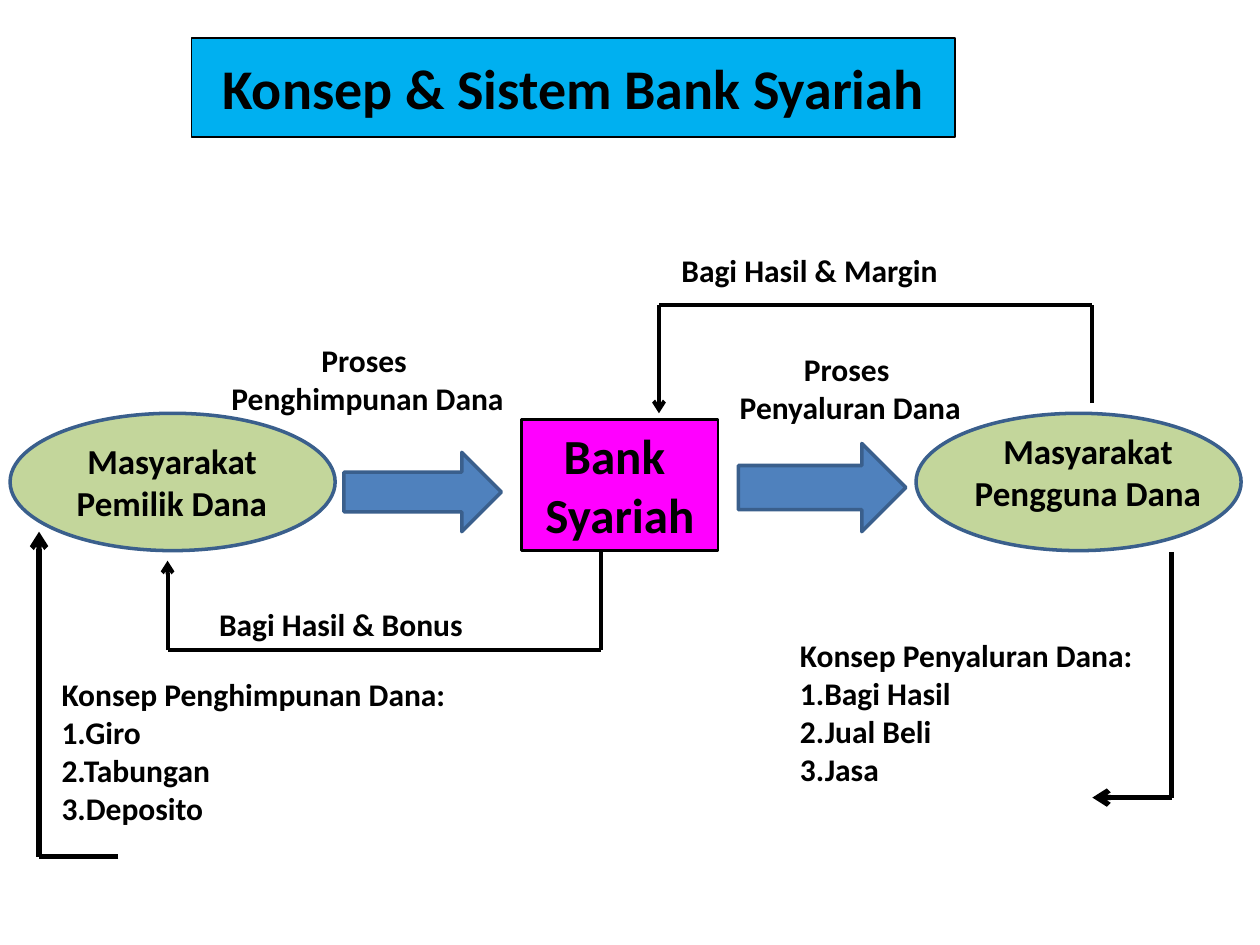
from itertools import pairwise

from lxml.etree import SubElement
from pptx import Presentation
from pptx.dml.color import RGBColor
from pptx.enum.shapes import MSO_CONNECTOR, MSO_SHAPE
from pptx.enum.text import MSO_ANCHOR, PP_ALIGN
from pptx.oxml.ns import qn
from pptx.util import Inches, Pt

BLACK = RGBColor(0x00, 0x00, 0x00)
SKY = RGBColor(0x00, 0xB0, 0xF0)
MAGENTA = RGBColor(0xFF, 0x00, 0xFF)
GREEN = RGBColor(0xC3, 0xD6, 0x9B)
BLUE = RGBColor(0x4F, 0x81, 0xBD)
NAVY = RGBColor(0x3A, 0x5F, 0x8C)

TITLE = "Konsep & Sistem Bank Syariah"
TITLE_AREA = (1.52, 0.3, 6.06, 0.79)
BANK = ["Bank ", "Syariah"]
BANK_AREA = (4.14, 3.33, 1.56, 1.04)

PARTIES = [(0.08, 3.28, 2.58, 1.09), (7.27, 3.28, 2.58, 1.09)]
PROCESS_ARROWS = [(2.73, 3.59, 1.25, 0.63), (5.86, 3.52, 1.33, 0.7)]

LABELS = [
    (["Masyarakat Pemilik Dana"], (0.31, 3.44, 2.11, 0.77), 20, PP_ALIGN.CENTER),
    (["Masyarakat Pengguna Dana"], (7.5, 3.36, 2.27, 0.77), 20, PP_ALIGN.CENTER),
    (["Proses", " Penghimpunan Dana"], (1.64, 2.66, 2.5, 0.71), 18, PP_ALIGN.CENTER),
    (["Proses", " Penyaluran Dana"], (5.47, 2.73, 2.5, 0.71), 18, PP_ALIGN.CENTER),
    (["Bagi Hasil & Bonus"], (1.64, 4.75, 2.19, 0.4), 18, PP_ALIGN.LEFT),
    (["Bagi Hasil & Margin"], (5.31, 1.94, 2.27, 0.4), 18, PP_ALIGN.LEFT),
    (["Konsep Penghimpunan Dana:", "1.Giro", "2.Tabungan", "3.Deposito"],
     (0.39, 5.31, 3.44, 1.31), 18, PP_ALIGN.LEFT),
    (["Konsep Penyaluran Dana:", "1.Bagi Hasil", "2.Jual Beli", "3.Jasa"],
     (6.25, 5, 3.05, 1.31), 18, PP_ALIGN.LEFT),
]

ROUTES = [
    ([(4.77, 4.38), (4.77, 5.16), (1.33, 5.16), (1.33, 4.45)], 2.25),
    ([(8.67, 3.2), (8.67, 2.42), (5.23, 2.42), (5.23, 3.28)], 2.25),
    ([(0.94, 6.8), (0.31, 6.8), (0.31, 4.22)], 3),
    ([(9.3, 4.38), (9.3, 6.33), (8.67, 6.33)], 3),
]


def write_text(box, lines, size=18, align=PP_ALIGN.CENTER, anchor=MSO_ANCHOR.TOP):
    frame = box.text_frame
    frame.word_wrap = True
    frame.vertical_anchor = anchor
    for index, line in enumerate(lines):
        para = frame.add_paragraph() if index else frame.paragraphs[0]
        para.alignment = align
        span = para.add_run()
        span.text = line
        span.font.name = "Calibri"
        span.font.size = Pt(size)
        span.font.bold = True
        span.font.color.rgb = BLACK


def paint(shape, fill, line, width):
    shape.fill.solid()
    shape.fill.fore_color.rgb = fill
    shape.line.color.rgb = line
    shape.line.width = Pt(width)


def add_block(page, kind, area, fill, line, width):
    shape = page.shapes.add_shape(kind, *map(Inches, area))
    shape.shadow.inherit = False
    paint(shape, fill, line, width)
    return shape


def add_route(page, points, width):
    for start, end in pairwise(points):
        connector = page.shapes.add_connector(
            MSO_CONNECTOR.STRAIGHT, *map(Inches, start + end))
        connector.line.color.rgb = BLACK
        connector.line.width = Pt(width)
        properties = connector._element.spPr
        SubElement(properties, qn("a:effectLst"))
    SubElement(properties.find(qn("a:ln")), qn("a:tailEnd"), type="arrow")


def main():
    deck = Presentation()
    deck.slide_width, deck.slide_height = Inches(10), Inches(7.5)
    page = deck.slides.add_slide(deck.slide_layouts[5])

    title = page.shapes.title
    title.left, title.top, title.width, title.height = map(Inches, TITLE_AREA)
    paint(title, SKY, BLACK, 1)
    write_text(title, [TITLE], size=32, anchor=MSO_ANCHOR.MIDDLE)

    bank = add_block(page, MSO_SHAPE.RECTANGLE, BANK_AREA, MAGENTA, BLACK, 1.5)
    write_text(bank, BANK, size=28)
    for area in PARTIES:
        add_block(page, MSO_SHAPE.OVAL, area, GREEN, NAVY, 2)
    for area in PROCESS_ARROWS:
        add_block(page, MSO_SHAPE.RIGHT_ARROW, area, BLUE, NAVY, 2)
    for lines, area, size, align in LABELS:
        box = page.shapes.add_textbox(*map(Inches, area))
        write_text(box, lines, size=size, align=align)
    for points, width in ROUTES:
        add_route(page, points, width)

    deck.save("out.pptx")


if __name__ == "__main__":
    main()
